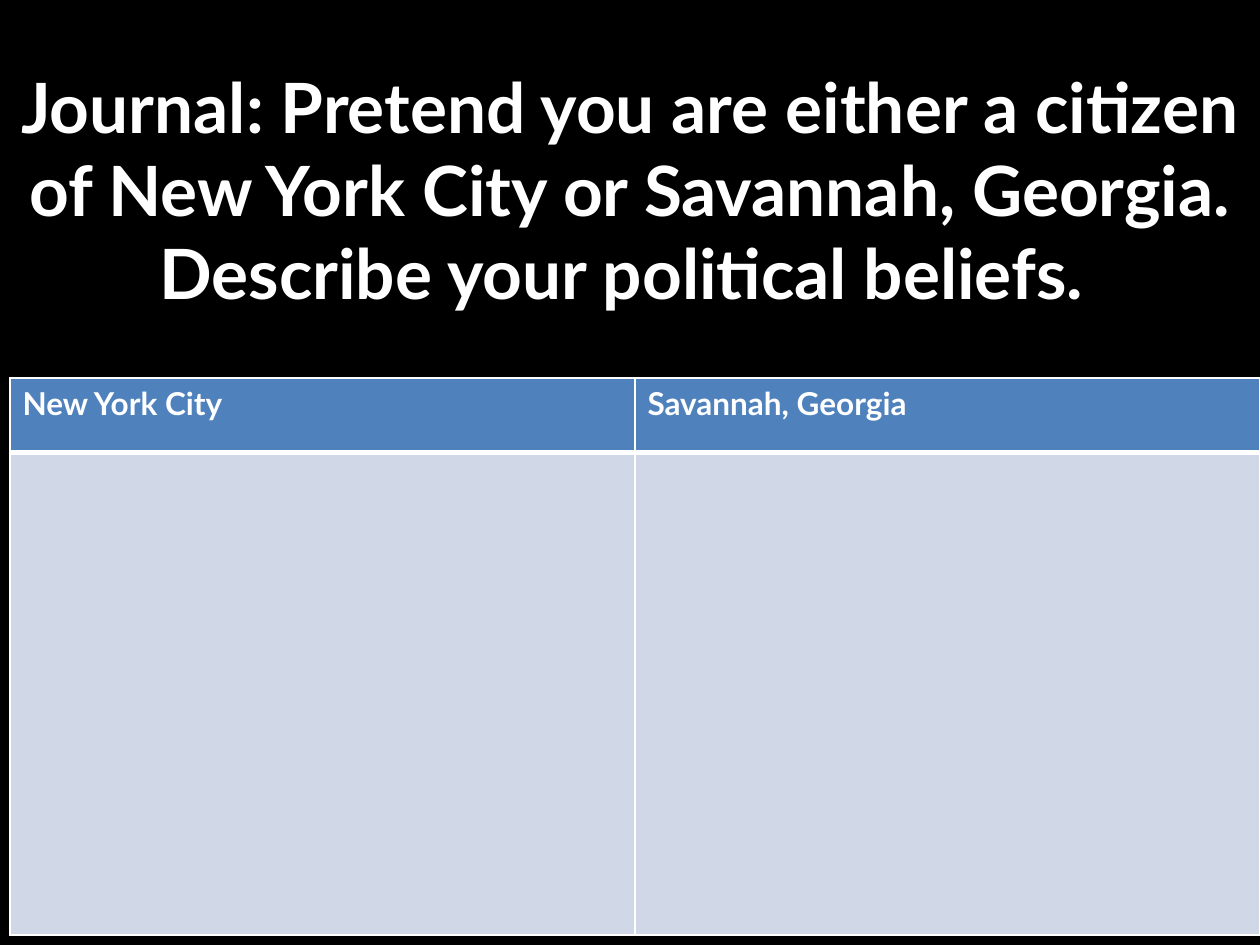
from lxml.etree import SubElement
from pptx import Presentation
from pptx.dml.color import RGBColor
from pptx.enum.text import MSO_ANCHOR, PP_ALIGN
from pptx.oxml.ns import qn
from pptx.util import Cm, Pt

COLORS = {
    "background": "000000",
    "text": "FFFFFF",
    "border": "FFFFFF",
    "header": "4F81BD",
    "body": "D0D8E8",
}
FONT = "Lato"
PROMPT = ("Journal: Pretend you are either a citizen of New York City or "
          "Savannah, Georgia. Describe your political beliefs. ")
CITIES = ["New York City", "Savannah, Georgia"]


def color(name):
    return RGBColor.from_string(COLORS[name])


def add_span(para, text, size):
    span = para.add_run()
    span.text = text
    span.font.name = FONT
    span.font.size = Pt(size)
    span.font.bold = True
    span.font.color.rgb = color("text")


def style_cell(cell, fill, widths):
    """Fill a cell and draw its borders; widths maps each side to points."""
    properties = cell._tc.get_or_add_tcPr()
    for side, width in widths.items():
        line = SubElement(properties, qn(f"a:ln{side}"), w=str(Pt(width)))
        solid = SubElement(line, qn("a:solidFill"))
        SubElement(solid, qn("a:srgbClr"), val=COLORS["border"])
    cell.fill.solid()
    cell.fill.fore_color.rgb = color(fill)


def add_prompt(page, left, top, width, height):
    box = page.shapes.add_textbox(left, top, width, height)
    frame = box.text_frame
    frame.word_wrap = True
    frame.vertical_anchor = MSO_ANCHOR.MIDDLE
    para = frame.paragraphs[0]
    para.alignment = PP_ALIGN.CENTER
    add_span(para, PROMPT, 39.6)


def add_city_table(page, left, top, width, height):
    table = page.shapes.add_table(2, len(CITIES), left, top, width, height).table
    header_height = Cm(1.5)
    table.rows[0].height = header_height
    table.rows[1].height = height - header_height

    for column, city in enumerate(CITIES):
        table.columns[column].width = width // len(CITIES)
        header, body = table.cell(0, column), table.cell(1, column)
        add_span(header.text_frame.paragraphs[0], city, 18)
        # Heavy rule under the header, thin lines elsewhere
        style_cell(header, "header", {"L": 1, "R": 1, "T": 1, "B": 3})
        style_cell(body, "body", {"L": 1, "R": 1, "T": 3, "B": 1})


def main():
    deck = Presentation()
    deck.slide_width, deck.slide_height = Cm(25.4), Cm(19.05)
    page = deck.slides.add_slide(deck.slide_layouts[6])
    page.background.fill.solid()
    page.background.fill.fore_color.rgb = color("background")

    # Journal prompt above, answer table below
    split, margin = Cm(7.62), Cm(0.2)
    add_prompt(page, 0, 0, deck.slide_width, split)
    add_city_table(page, margin, split, deck.slide_width - margin,
                   deck.slide_height - split - margin)
    deck.save("out.pptx")


if __name__ == "__main__":
    main()
